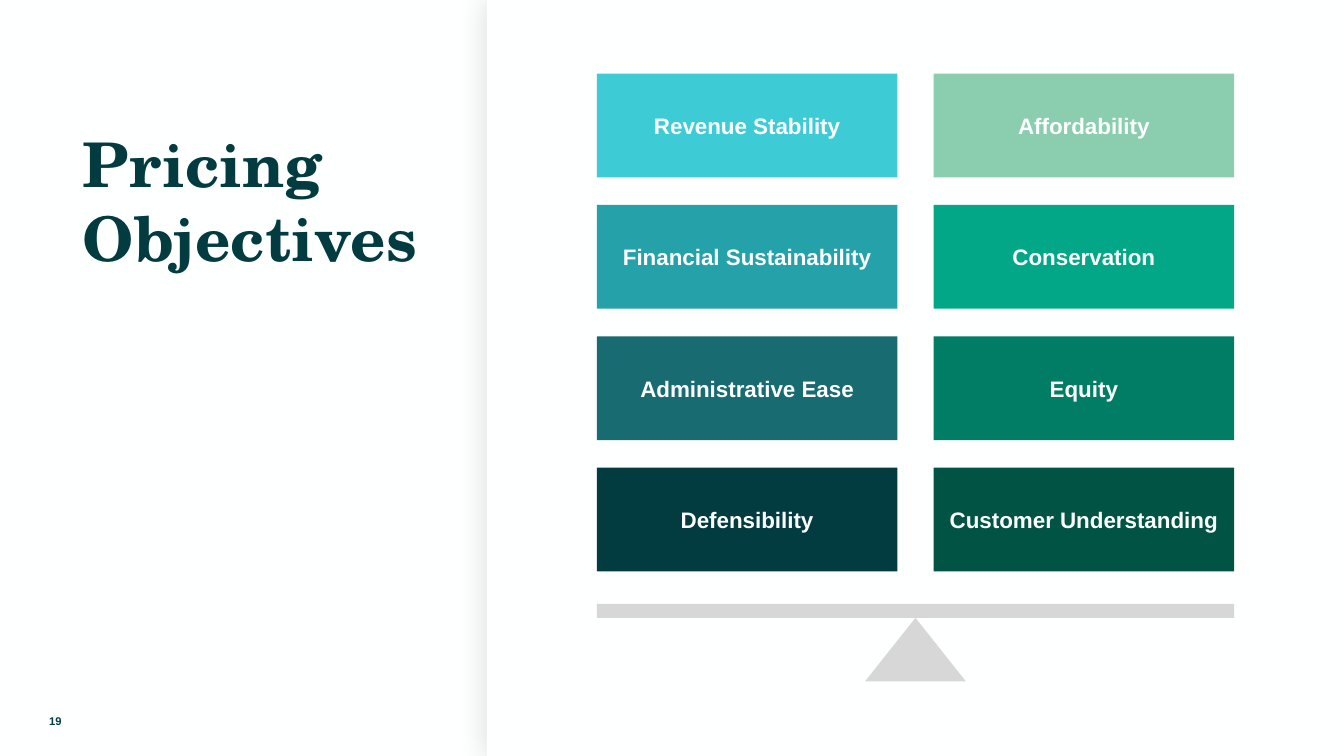
from lxml import etree
from pptx import Presentation, util as u
from pptx.dml.color import RGBColor
from pptx.enum import shapes, text
from pptx.oxml.ns import qn

OFF_WHITE, DARK_TEAL, GREY = "FEFFFF", "023B40", "D7D7D7"


def paint(target, colour):
    """Give a shape, background or font a solid colour."""
    fill = target.fill
    fill.solid()
    fill.fore_color.rgb = RGBColor.from_string(colour)


def write(frame, lines, font, size, colour, margins=(0, 0, 0, 0)):
    """Write bold lines, parted by line breaks, in one paragraph."""
    frame.word_wrap = True
    (frame.margin_left, frame.margin_top,
     frame.margin_right, frame.margin_bottom) = [u.Inches(m) for m in margins]
    paragraph = frame.paragraphs[0]
    for number, line in enumerate(lines):
        if number:
            paragraph.add_line_break()
        run = paragraph.add_run()
        run.text = line
        run.font.name = font
        run.font.size = u.Pt(size)
        run.font.bold = True
        paint(run.font, colour)
    return paragraph


deck = Presentation()
deck.slide_width, deck.slide_height = u.Inches(13.33), u.Inches(7.5)
slide = deck.slides.add_slide(deck.slide_layouts[6])
paint(slide.background, OFF_WHITE)

# Right panel with a soft shadow along its left edge
panel = slide.shapes.add_shape(shapes.MSO_SHAPE.RECTANGLE, u.Inches(4.83), 0,
                               u.Inches(8.5), u.Inches(7.5))
paint(panel, OFF_WHITE)
panel.line.fill.background()
panel.shadow.inherit = False
effects = panel._element.spPr.find(qn("a:effectLst"))
shadow = etree.SubElement(effects, qn("a:outerShdw"), blurRad=str(u.Pt(22)),
                          dist=str(u.Pt(1)), dir="5400000", rotWithShape="0")
black = etree.SubElement(shadow, qn("a:srgbClr"), val="000000")
etree.SubElement(black, qn("a:alpha"), val="15000")

title = slide.shapes.add_textbox(u.Inches(0.82), u.Inches(1.04),
                                 u.Inches(3.52), u.Inches(4.3))
write(title.text_frame, ["Pricing", "Objectives"], "TeX Gyre Schola", 44,
      DARK_TEAL, (0, 0.21, 0, 0))

page_number = slide.shapes.add_textbox(0, u.Inches(6.95), u.Inches(1.1), u.Inches(0.4))
page_number.text_frame.vertical_anchor = text.MSO_ANCHOR.MIDDLE
write(page_number.text_frame, ["19"], "Arial", 8, DARK_TEAL,
      (0.1, 0.05, 0.1, 0.05)).alignment = text.PP_ALIGN.CENTER

# Objectives, one column on each side of the balance
columns = [
    [("Revenue Stability", "3DCCD5"), ("Financial Sustainability", "25A1A9"),
     ("Administrative Ease", "186B71"), ("Defensibility", DARK_TEAL)],
    [("Affordability", "8ACEAF"), ("Conservation", "02A787"),
     ("Equity", "017D65"), ("Customer Understanding", "015444")],
]
for column, objectives in enumerate(columns):
    for row, (objective, colour) in enumerate(objectives):
        box = slide.shapes.add_shape(
            shapes.MSO_SHAPE.RECTANGLE,
            u.Inches(5.92 + 3.34 * column), u.Inches(0.73 + 3.91 / 3 * row),
            u.Inches(2.98), u.Inches(1.03))
        paint(box, colour)
        box.line.fill.background()
        box.shadow.inherit = False
        box.text_frame.vertical_anchor = text.MSO_ANCHOR.MIDDLE
        label = write(box.text_frame, [objective], "Arial", 16, OFF_WHITE)
        label.alignment = text.PP_ALIGN.CENTER
        label.space_before = u.Pt(10)

# Balance: beam and pivot
for kind, left, top, width, height in [
    (shapes.MSO_SHAPE.RECTANGLE, 5.92, 5.99, 6.32, 0.14),
    (shapes.MSO_SHAPE.ISOSCELES_TRIANGLE, 8.58, 6.13, 1, 0.63),
]:
    part = slide.shapes.add_shape(kind, u.Inches(left), u.Inches(top),
                                  u.Inches(width), u.Inches(height))
    paint(part, GREY)
    part.line.fill.background()
    part.shadow.inherit = False

deck.save("out.pptx")
